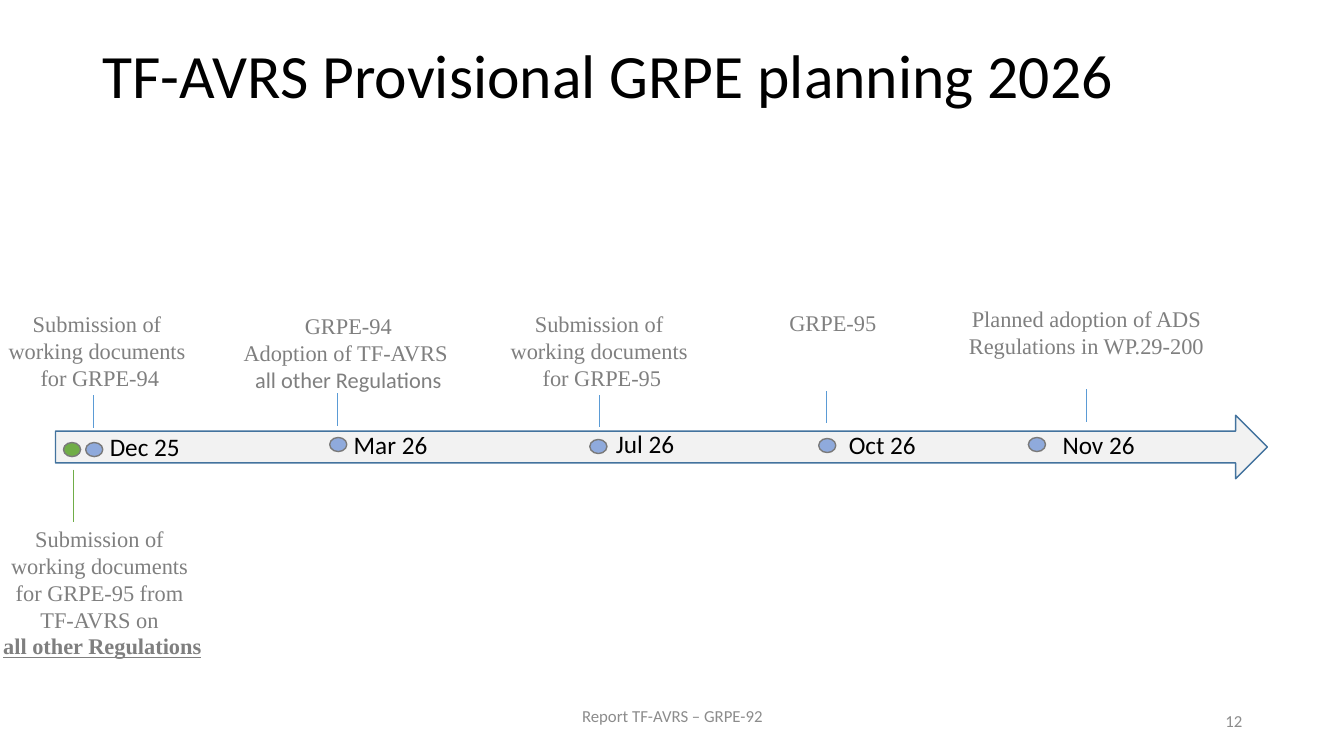
from lxml import etree
from pptx import Presentation
from pptx.dml.color import RGBColor
from pptx.enum import shapes, text
from pptx.oxml import ns
from pptx.util import Inches, Pt

SERIF = "Times New Roman"
BLUE, GREEN, GREY = "5B9BD5", "70AD47", "7F7F7F"
LEFT, CENTER, RIGHT = text.PP_ALIGN.LEFT, text.PP_ALIGN.CENTER, text.PP_ALIGN.RIGHT
TOP, MIDDLE = text.MSO_ANCHOR.TOP, text.MSO_ANCHOR.MIDDLE

DATES = [
    ("Dec 25", 0.99, 4.23, 0.98),
    ("Mar 26", 3.41, 4.21, 1.24),
    ("Jul 26", 6.01, 4.2, 1.24),
    ("Oct 26", 8.32, 4.21, 0.98),
    ("Nov 26", 10.44, 4.21, 0.98),
]
DOTS = [
    (0.85, 4.39, "8FAADC"),
    (3.27, 4.34, "8FAADC"),
    (5.85, 4.36, "8FAADC"),
    (8.12, 4.35, "8FAADC"),
    (10.2, 4.34, "8FAADC"),
    (0.63, 4.39, GREEN),
]
TICKS = [
    (0.93, 3.92, 4.25, BLUE),
    (3.35, 3.9, 4.23, BLUE),
    (5.94, 3.92, 4.24, BLUE),
    (8.2, 3.88, 4.2, BLUE),
    (10.77, 3.86, 4.19, BLUE),
    (0.73, 4.66, 5.18, GREEN),
]
SUBMISSION = ["Submission of ", "working documents "]
ADS = ["Planned adoption of ADS Regulations in WP.29-200"]


def rgb(color):
    return RGBColor.from_string(color)


def add_shape(slide, kind, box, fill, line):
    sp = slide.shapes.add_shape(kind, *map(Inches, box))
    sp.shadow.inherit = False
    sp.fill.solid()
    sp.fill.fore_color.rgb = rgb(fill)
    sp.line.color.rgb = rgb(line)
    sp.line.width = Pt(1)


def add_tick(slide, x, top, bottom, color):
    line = slide.shapes.add_connector(
        shapes.MSO_CONNECTOR.STRAIGHT, Inches(x), Inches(top), Inches(x), Inches(bottom)
    )
    line.line.color.rgb = rgb(color)
    line.line.width = Pt(0.5)
    etree.SubElement(line._element.spPr, ns.qn("a:effectLst"))


def add_text(slide, lines, box, size=16, font="Calibri", color="000000",
             align=LEFT, anchor=TOP, wrap=True, spacing=None):
    tf = slide.shapes.add_textbox(*map(Inches, box)).text_frame
    tf.word_wrap = wrap
    tf.vertical_anchor = anchor
    for i, line in enumerate(lines):
        p = tf.paragraphs[0] if i == 0 else tf.add_paragraph()
        p.alignment = align
        p.line_spacing = spacing
        r = p.add_run()
        r.text = line
        r.font.size = Pt(size)
        r.font.name = font
        r.font.color.rgb = rgb(color)
    return tf


def add_label(slide, lines, box, color=GREY, wrap=True):
    tf = add_text(slide, lines, box, font=SERIF, color=color, align=CENTER, wrap=wrap)
    return tf.paragraphs[-1].runs[0].font


def main():
    prs = Presentation()
    prs.slide_width, prs.slide_height = Inches(13.33), Inches(7.5)
    s = prs.slides.add_slide(prs.slide_layouts[6])

    add_text(s, ["TF-AVRS Provisional GRPE planning 2026"], (0.92, 0.4, 11.5, 1.45),
             size=44, spacing=0.9)

    add_shape(s, shapes.MSO_SHAPE.RIGHT_ARROW, (0.55, 4.12, 12.02, 0.63), "F2F2F2", "43739E")
    for date, x, y, width in DATES:
        add_text(s, [date], (x, y, width, 0.4), size=18)
    for x, y, fill in DOTS:
        add_shape(s, shapes.MSO_SHAPE.OVAL, (x, y, 0.17, 0.14), fill, "7A7A7A")
    for tick in TICKS:
        add_tick(s, *tick)

    add_label(s, SUBMISSION + ["for GRPE-94"], (-0.03, 3.03, 2.04, 0.91), wrap=False)
    regulations = add_label(s, ["GRPE-94", "Adoption of TF-AVRS ", "all other Regulations"],
                            (2.3, 3.05, 2.31, 0.91), wrap=False)
    regulations.name = "Calibri"
    add_label(s, SUBMISSION + ["for GRPE-95"], (4.95, 3.03, 2.04, 0.91), wrap=False)
    add_label(s, ["GRPE-95"], (6.95, 3.02, 2.62, 0.37), color="808080")
    add_label(s, ADS, (9.46, 2.98, 2.63, 0.64))
    regulations = add_label(
        s, SUBMISSION + ["for GRPE-95 from ", "TF-AVRS on ", "all other Regulations"],
        (-0.3, 5.16, 2.63, 1.45))
    regulations.bold = regulations.underline = True

    add_text(s, ["Report TF-AVRS – GRPE-92"], (4.42, 6.95, 4.5, 0.4),
             size=12, color="8C8C8C", align=CENTER)
    add_text(s, ["12"], (9.42, 6.95, 3, 0.4),
             size=12, color="8C8C8C", align=RIGHT, anchor=MIDDLE)
    prs.save("out.pptx")


if __name__ == "__main__":
    main()
